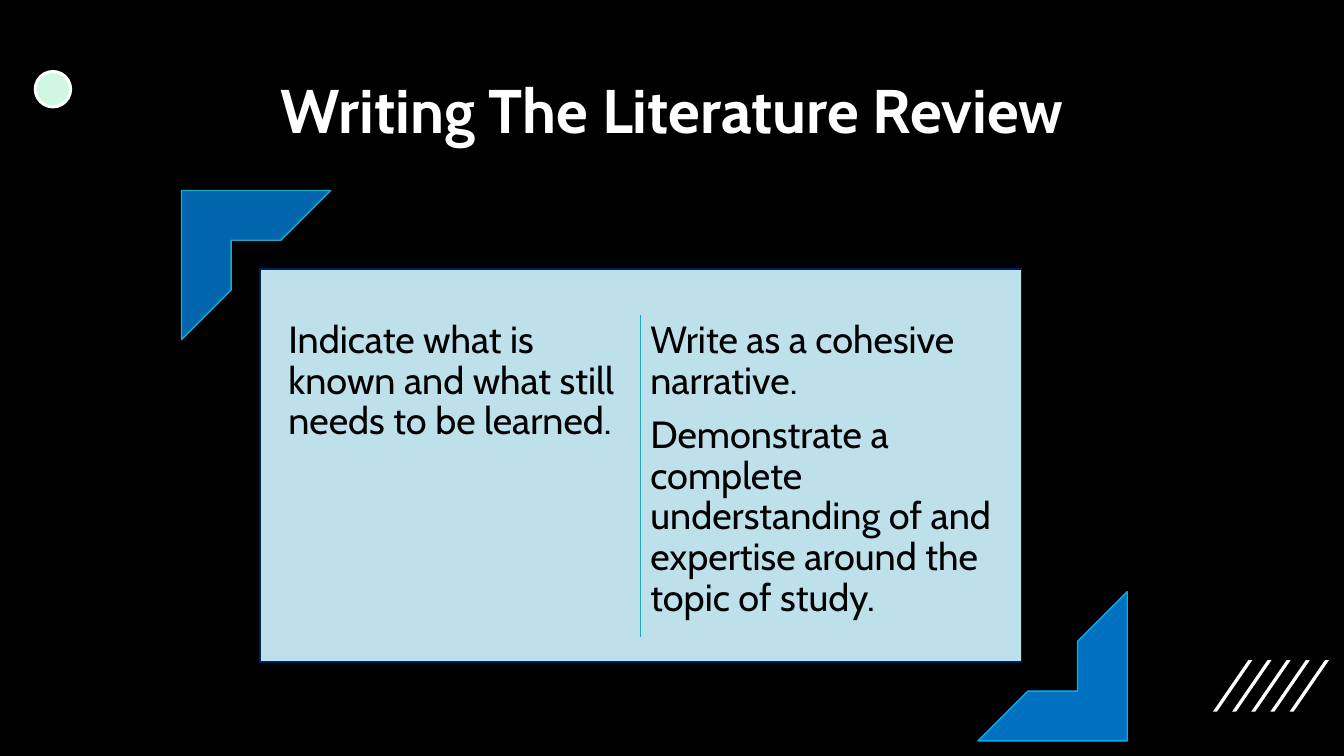
import pptx
import pptx.util
import pptx.dml.color
import pptx.enum.shapes
import pptx.enum.text
import pptx.oxml.ns
import lxml.etree

Inches = pptx.util.Inches
Pt = pptx.util.Pt
RGBColor = pptx.dml.color.RGBColor
Shape = pptx.enum.shapes.MSO_SHAPE
Anchor = pptx.enum.text.MSO_ANCHOR
Align = pptx.enum.text.PP_ALIGN
qn = pptx.oxml.ns.qn

BLACK = RGBColor(0x00, 0x00, 0x00)
WHITE = RGBColor(0xFF, 0xFF, 0xFF)
MINT = RGBColor(0xCF, 0xF7, 0xE1)
PALE = RGBColor(0xBD, 0xE0, 0xEA)
NAVY = RGBColor(0x00, 0x20, 0x60)
BLUE = RGBColor(0x00, 0x70, 0xC0)
SKY = RGBColor(0x00, 0xB0, 0xF0)
CYAN = RGBColor(0x1E, 0xB9, 0xD3)
TEAL = RGBColor(0x1B, 0xA8, 0xBF)


def add_shape(slide, kind, box, fill, line, width=1):
    shape = slide.shapes.add_shape(kind, *map(Inches, box))
    shape.shadow.inherit = False
    shape.fill.solid()
    shape.fill.fore_color.rgb = fill
    shape.line.color.rgb = line
    shape.line.width = Pt(width)
    return shape


def set_alpha(shape, share):
    for color in shape._element.spPr.iter(qn("a:srgbClr")):
        alpha = lxml.etree.SubElement(color, qn("a:alpha"))
        alpha.set("val", str(share * 1000))


def add_slash(slide, left):
    top, base = 6.55, 7.06
    points = [(left + 0.04, base), (left, base), (left + 0.35, top), (left + 0.39, top)]
    points = [(Inches(x), Inches(y)) for x, y in points]
    form = slide.shapes.build_freeform(*points[0])
    form.add_line_segments(points[1:], close=True)
    slash = form.convert_to_shape()
    slash.shadow.inherit = False
    slash.fill.solid()
    slash.fill.fore_color.rgb = WHITE
    slash.line.fill.background()


def add_text(slide, box, lines, size, color, bold=False, align=Align.LEFT,
             anchor=Anchor.TOP, inset=None, after=0):
    frame = slide.shapes.add_textbox(*map(Inches, box)).text_frame
    frame.word_wrap = True
    frame.vertical_anchor = anchor
    if inset is not None:
        frame.margin_left = frame.margin_right = Inches(inset)
        frame.margin_top = frame.margin_bottom = Inches(inset)
    frame.text = "\n".join(lines)
    for para in frame.paragraphs:
        para.alignment = align
        para.line_spacing = 0.9
        para.space_after = Pt(after)
        for run in para.runs:
            run.font.name = "Cabin"
            run.font.size = Pt(size)
            run.font.bold = bold
            run.font.color.rgb = color


def add_rule(slide, x, top, base):
    rule = slide.shapes.add_connector(
        pptx.enum.shapes.MSO_CONNECTOR.STRAIGHT,
        Inches(x), Inches(top), Inches(x), Inches(base))
    rule.line.color.rgb = TEAL
    rule.line.width = Pt(1)
    lxml.etree.SubElement(rule._element.spPr, qn("a:effectLst"))


def main():
    deck = pptx.Presentation()
    deck.slide_width = Inches(13.33)
    deck.slide_height = Inches(7.5)
    slide = deck.slides.add_slide(deck.slide_layouts[6])
    slide.background.fill.solid()
    slide.background.fill.fore_color.rgb = BLACK

    for step in range(5):
        add_slash(slide, 12.03 + 0.19 * step)
    add_shape(slide, Shape.OVAL, (0.35, 0.71, 0.35, 0.35), MINT, WHITE, 2.25)
    add_text(slide, (0.92, 0.4, 11.5, 1.45), ["Writing The Literature Review"],
             44, WHITE, bold=True, align=Align.CENTER, anchor=Anchor.MIDDLE)

    add_shape(slide, Shape.RECTANGLE, (2.58, 2.67, 7.55, 3.9), PALE, NAVY)
    columns = [
        (2.8, ["Indicate what is known and what still needs to be learned."]),
        (6.39, ["Write as a cohesive narrative.",
                "Demonstrate a complete understanding of and expertise "
                "around the topic of study."]),
    ]
    for left, lines in columns:
        add_text(slide, (left, 3.12, 3.51, 3.34), lines, 27, BLACK,
                 inset=0.06, after=9.45)

    corner = add_shape(slide, Shape.HALF_FRAME, (1.8, 1.89, 1.48, 1.48), BLUE, CYAN)
    set_alpha(corner, 90)
    add_rule(slide, 6.35, 3.13, 6.32)
    corner = add_shape(slide, Shape.HALF_FRAME, (9.7, 5.87, 1.48, 1.48), BLUE, SKY)
    corner.rotation = 180

    deck.save("out.pptx")


if __name__ == "__main__":
    main()
